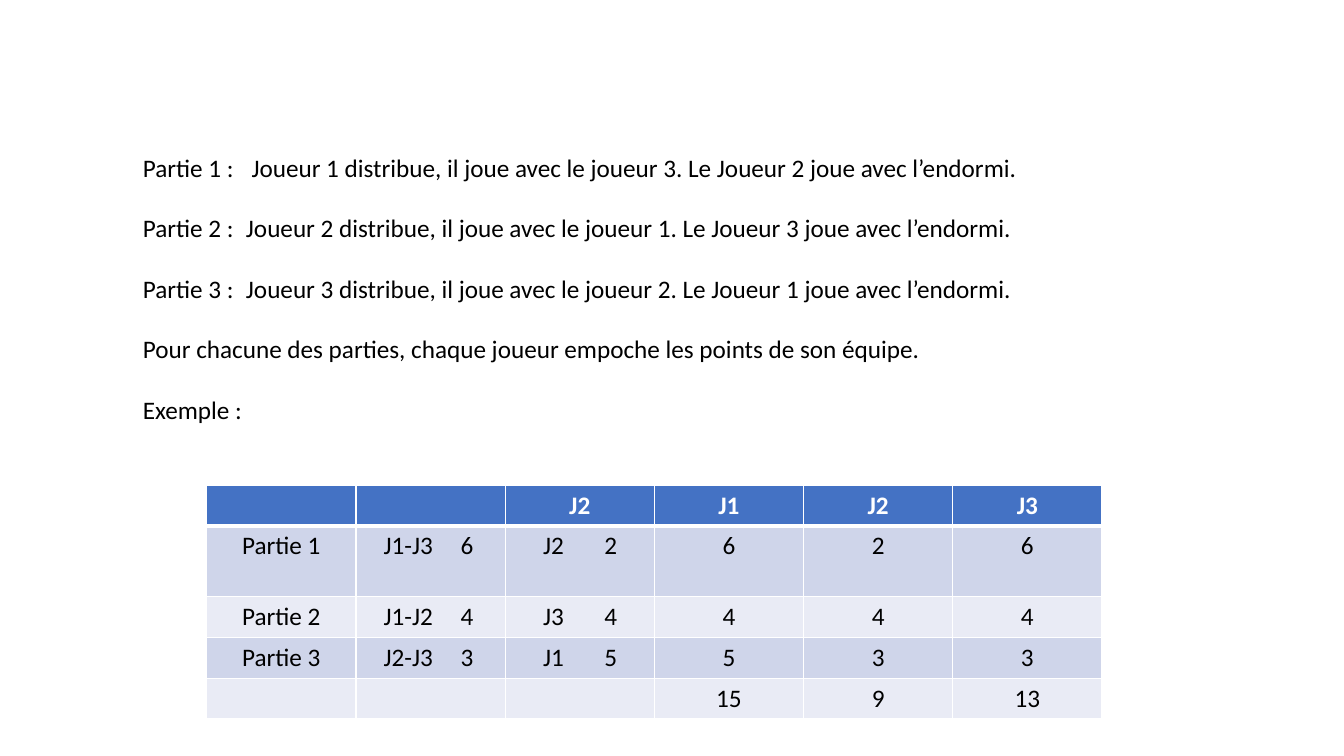
from lxml.etree import SubElement
from pptx import Presentation
from pptx.dml.color import RGBColor
from pptx.enum.text import MSO_AUTO_SIZE, PP_ALIGN
from pptx.oxml.ns import qn
from pptx.util import Cm, Pt

BLACK = RGBColor(0x00, 0x00, 0x00)
WHITE = RGBColor(0xFF, 0xFF, 0xFF)
BLUE = RGBColor(0x44, 0x72, 0xC4)
BAND_DARK = RGBColor(0xCF, 0xD5, 0xEA)
BAND_LIGHT = RGBColor(0xE9, 0xEB, 0xF5)


def write(paragraph, text, color=BLACK, bold=False, tab=None):
    run = paragraph.add_run()
    run.text = text
    run.font.name = "Calibri"
    run.font.size = Pt(18)
    run.font.bold = bold
    run.font.color.rgb = color
    if tab:
        tabs = SubElement(paragraph._p.get_or_add_pPr(), qn("a:tabLst"))
        SubElement(tabs, qn("a:tab"), pos=str(Cm(tab)), algn="l")


def add_border(cell, side, width):
    line = SubElement(cell._tc.get_or_add_tcPr(), qn(f"a:ln{side}"), w=str(Pt(width)))
    fill = SubElement(line, qn("a:solidFill"))
    SubElement(fill, qn("a:srgbClr"), val=str(WHITE))


prs = Presentation()
prs.slide_width = Cm(33.87)
prs.slide_height = Cm(19.05)
slide = prs.slides.add_slide(prs.slide_layouts[6])

rules = [
    ("Partie 1 :\tJoueur 1 distribue, il joue avec le joueur 3. Le Joueur 2 joue avec l’endormi.", 2.74),
    ("Partie 2 :\tJoueur 2 distribue, il joue avec le joueur 1. Le Joueur 3 joue avec l’endormi.", 2.6),
    ("Partie 3 :\tJoueur 3 distribue, il joue avec le joueur 2. Le Joueur 1 joue avec l’endormi.", 2.6),
    ("Pour chacune des parties, chaque joueur empoche les points de son équipe.", None),
    ("Exemple :", None),
]
rules_frame = slide.shapes.add_textbox(Cm(3.35), Cm(3.71), Cm(26.29), Cm(10.26)).text_frame
rules_frame.word_wrap = True
rules_frame.auto_size = MSO_AUTO_SIZE.SHAPE_TO_FIT_TEXT
for index, (rule, tab) in enumerate(rules):
    paragraph = rules_frame.add_paragraph() if index else rules_frame.paragraphs[0]
    if index < len(rules) - 1:
        paragraph.space_after = Pt(21.6)
    write(paragraph, rule, tab=tab)

scores = [
    ["", "", "J2", "J1", "J2", "J3"],
    ["Partie 1", "J1-J3\t6", "J2\t2", "6", "2", "6"],
    ["Partie 2", "J1-J2\t4", "J3\t4", "4", "4", "4"],
    ["Partie 3", "J2-J3\t3", "J1\t5", "5", "3", "3"],
    ["", "", "", "15", "9", "13"],
]
row_heights = [1.03, 1.78, 1.03, 1.03, 1.03]
team_layout = {1: (0.7, 1.94), 2: (0.96, 1.54)}

score_table = slide.shapes.add_table(
    len(scores), len(scores[0]), Cm(5.21), Cm(12.22), Cm(22.58), Cm(sum(row_heights))
).table
for column in score_table.columns:
    column.width = Cm(3.76)

for row, (entries, height) in enumerate(zip(scores, row_heights)):
    score_table.rows[row].height = Cm(height)
    header = row == 0
    for col, entry in enumerate(entries):
        cell = score_table.cell(row, col)
        for side in "LRTB":
            thick = (header and side == "B") or (row == 1 and side == "T")
            add_border(cell, side, 3 if thick else 1)
        cell.fill.solid()
        cell.fill.fore_color.rgb = BLUE if header else BAND_DARK if row % 2 else BAND_LIGHT
        paragraph = cell.text_frame.paragraphs[0]
        paragraph.alignment = PP_ALIGN.CENTER
        tab = None
        if "\t" in entry:
            margin, tab = team_layout[col]
            cell.margin_left = Cm(margin)
            paragraph.alignment = PP_ALIGN.LEFT
        if entry:
            write(paragraph, entry, WHITE if header else BLACK, header, tab)

prs.save("out.pptx")
